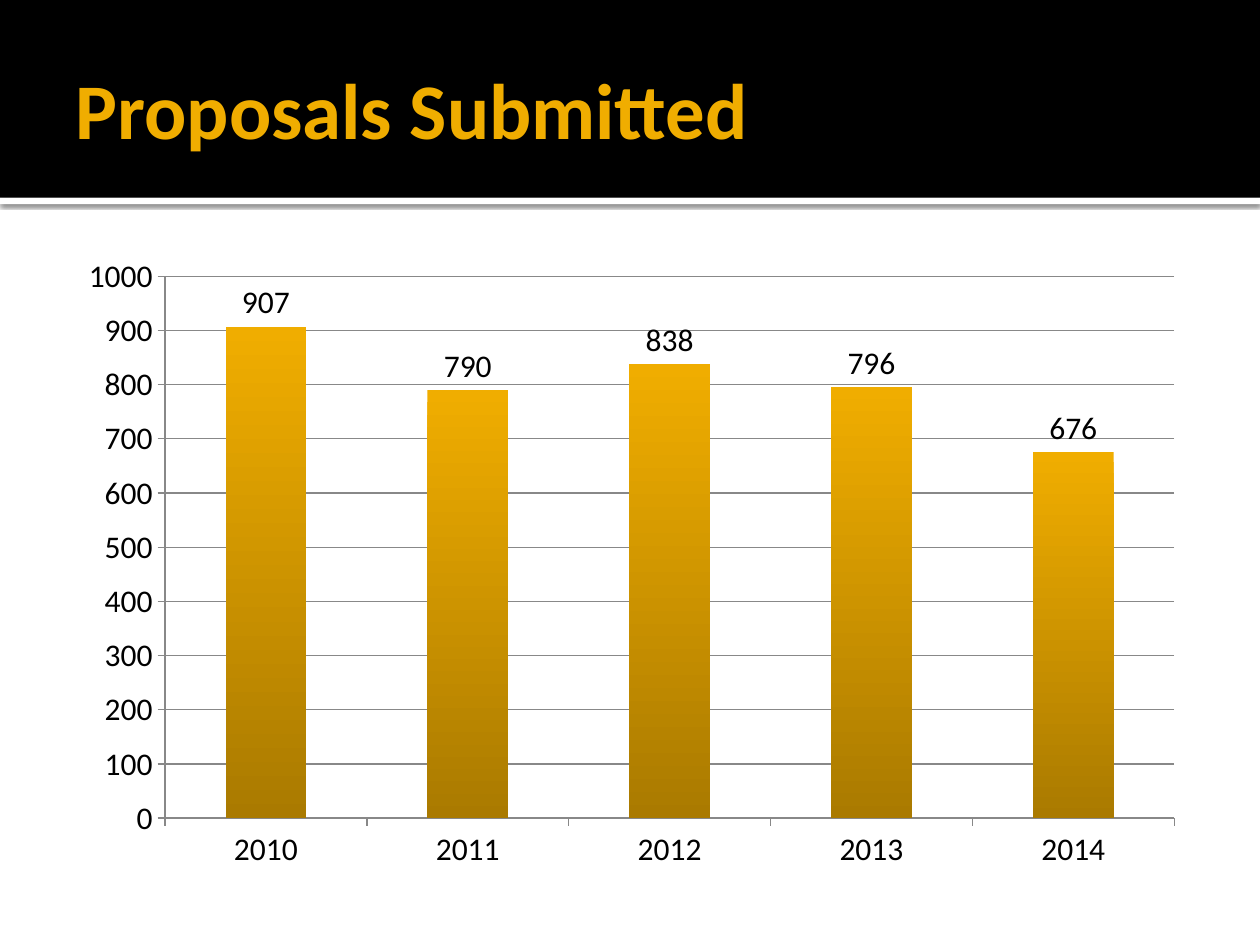
import pptx
import pptx.chart.data
import pptx.dml.color
import pptx.enum.chart
import pptx.enum.shapes
import pptx.enum.text
import pptx.oxml
import pptx.util
from pptx.util import Inches, Pt

RGBColor = pptx.dml.color.RGBColor
BLACK = RGBColor(0x00, 0x00, 0x00)
WHITE = RGBColor(0xFF, 0xFF, 0xFF)
GOLD = RGBColor(0xF0, 0xAD, 0x00)
DARK_GOLD = RGBColor(0xAA, 0x7A, 0x00)
GRAY = RGBColor(0x88, 0x88, 0x88)

A_NS = 'xmlns:a="http://schemas.openxmlformats.org/drawingml/2006/main"'
C_NS = 'xmlns:c="http://schemas.openxmlformats.org/drawingml/2006/chart"'


class SlideBuilder:
    font = "Calibri"

    def __init__(self, slide):
        self.s = slide

    def band(self, top, height, color, shadow=False):
        sp = self.s.shapes.add_shape(
            pptx.enum.shapes.MSO_SHAPE.RECTANGLE,
            0, Inches(top), Inches(10), Inches(height))
        sp.fill.solid()
        sp.fill.fore_color.rgb = color
        sp.line.fill.background()
        sp.shadow.inherit = False
        if shadow:
            effects = sp._element.spPr.find(pptx.oxml.ns.qn("a:effectLst"))
            effects.append(pptx.oxml.parse_xml(
                f'<a:outerShdw {A_NS} blurRad="{Pt(2.5)}" dist="{Pt(0.8)}" '
                'dir="5400000" algn="tl" rotWithShape="0">'
                '<a:srgbClr val="000000"><a:alpha val="60000"/></a:srgbClr>'
                '</a:outerShdw>'))

    def title(self, text, left, top, width, height):
        sp = self.s.shapes.title
        sp.left, sp.top = Inches(left), Inches(top)
        sp.width, sp.height = Inches(width), Inches(height)
        # Bring the title in front of the bands
        self.s.shapes._spTree.append(sp._element)
        tf = sp.text_frame
        tf.word_wrap = True
        tf.auto_size = pptx.enum.text.MSO_AUTO_SIZE.NONE
        tf.vertical_anchor = pptx.enum.text.MSO_ANCHOR.MIDDLE
        tf.margin_left = Inches(0.1)
        tf.margin_right = tf.margin_top = tf.margin_bottom = Inches(0.05)
        p = tf.paragraphs[0]
        p.alignment = pptx.enum.text.PP_ALIGN.LEFT
        r = p.add_run()
        r.text = text
        r.font.name, r.font.size, r.font.bold = self.font, Pt(45), True
        r.font.color.rgb = GOLD

    def axis(self, axis):
        axis.major_tick_mark = pptx.enum.chart.XL_TICK_MARK.OUTSIDE
        axis.minor_tick_mark = pptx.enum.chart.XL_TICK_MARK.NONE
        axis.format.line.color.rgb = GRAY
        axis.format.line.width = Pt(0.75)

    def column_chart(self, name, cats, vals, left, top, width, height):
        data = pptx.chart.data.CategoryChartData(number_format="0")
        data.categories = cats
        data.add_series(name, vals)
        chart = self.s.shapes.add_chart(
            pptx.enum.chart.XL_CHART_TYPE.COLUMN_CLUSTERED,
            Inches(left), Inches(top), Inches(width), Inches(height), data).chart
        chart.has_legend = chart.has_title = False
        chart.font.name, chart.font.size = self.font, Pt(18)
        chart.font.color.rgb = BLACK

        # Axes and gridlines
        self.axis(chart.category_axis)
        val_axis = chart.value_axis
        self.axis(val_axis)
        val_axis.minimum_scale, val_axis.maximum_scale = 0, 1000
        val_axis.major_unit = 100
        val_axis.has_major_gridlines = True
        val_axis.major_gridlines.format.line.color.rgb = GRAY
        val_axis.major_gridlines.format.line.width = Pt(0.75)
        val_axis.tick_labels.number_format = "0"
        val_axis.tick_labels.number_format_is_linked = False

        # Columns shaded from top to bottom, with values above
        plot = chart.plots[0]
        plot.gap_width = 150
        plot.vary_by_categories = False
        fill = plot.series[0].format.fill
        fill.gradient()
        fill.gradient_angle = 270
        for stop, color in zip(fill.gradient_stops, (GOLD, DARK_GOLD)):
            stop.color.rgb = color
        plot.has_data_labels = True
        labels = plot.data_labels
        labels.show_value = True
        labels.position = pptx.enum.chart.XL_LABEL_POSITION.OUTSIDE_END

        # Plot area as fractions of the chart frame
        area = chart._chartSpace.chart.plotArea
        for old in area.findall(pptx.oxml.ns.qn("c:layout")):
            area.remove(old)
        sizes = "".join(f'<c:{k} val="{v}"/>' for k, v in
                        (("x", 0.09), ("y", 0.05), ("w", 0.89), ("h", 0.85)))
        area.insert(0, pptx.oxml.parse_xml(
            f'<c:layout {C_NS}><c:manualLayout><c:layoutTarget val="inner"/>'
            f'<c:xMode val="edge"/><c:yMode val="edge"/>{sizes}'
            '</c:manualLayout></c:layout>'))


def main():
    prs = pptx.Presentation()
    prs.slide_width, prs.slide_height = Inches(10), Inches(7.5)
    b = SlideBuilder(prs.slides.add_slide(prs.slide_layouts[5]))

    # Header
    b.band(1.57, 0.05, WHITE, shadow=True)
    b.band(0, 1.57, BLACK)
    b.title("Proposals Submitted", 0.5, 0.17, 9, 1.37)

    # Yearly proposals
    b.column_chart("Series 1", ["2010", "2011", "2012", "2013", "2014"],
                   [907, 790, 838, 796, 676], 0.5, 1.94, 9, 5.06)

    prs.save("out.pptx")


if __name__ == "__main__":
    main()
